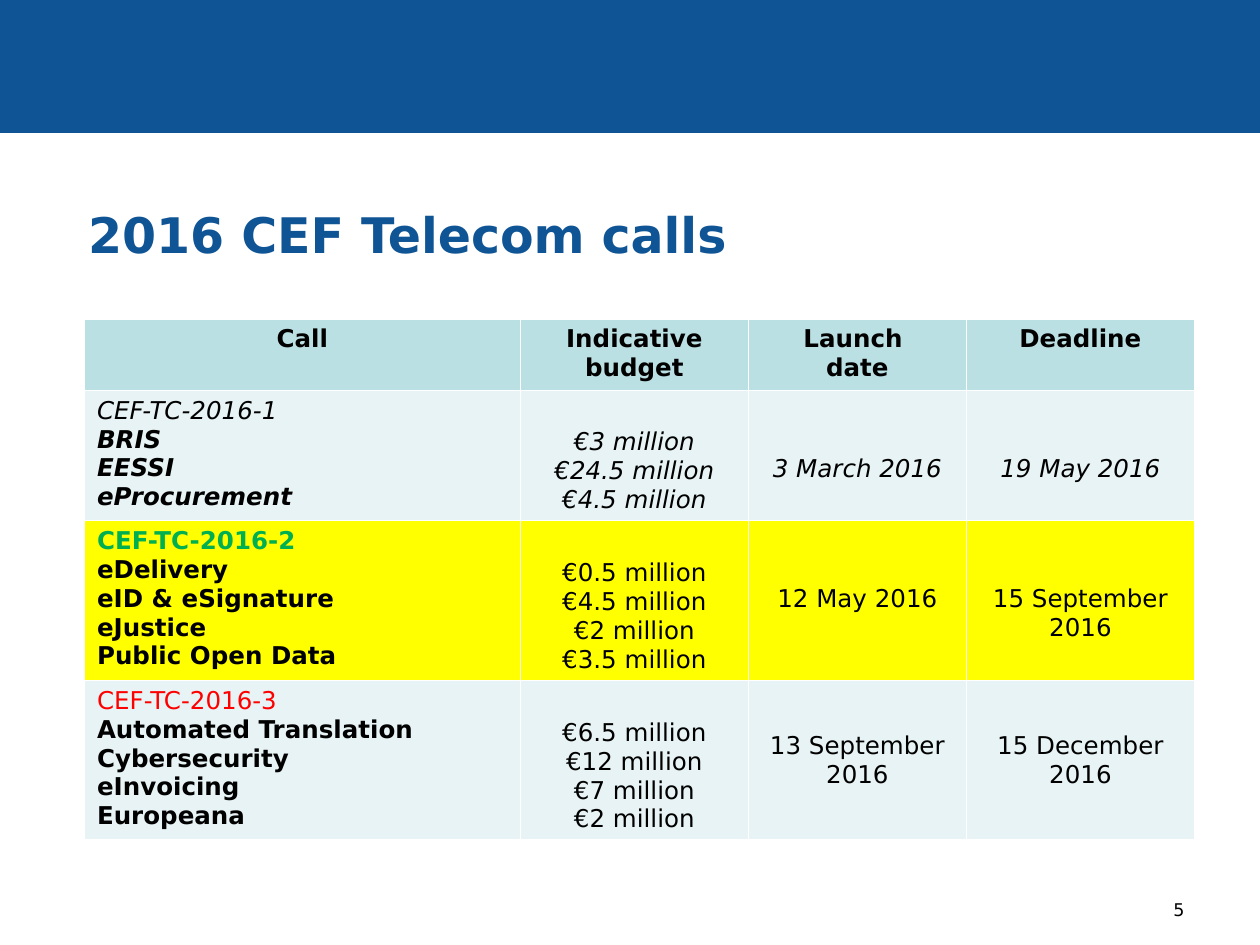
import pptx
import pptx.dml.color
import pptx.enum.shapes
import pptx.enum.text
import pptx.util

Inches = pptx.util.Inches
ALIGN = pptx.enum.text.PP_ALIGN
ANCHOR = pptx.enum.text.MSO_ANCHOR
FONT = "DejaVu Sans"
BLUE, BLACK, PALE, YELLOW = "0F5494", "000000", "E7F3F4", "FFFF00"
LINE_HEIGHT = 0.23
HEADINGS = [["Call"], ["Indicative budget"], ["Launch ", "date"], ["Deadline"]]
COLUMN_WIDTHS = [3.46, 1.81, 1.73, 1.81]
ROW_HEIGHTS = [0.55, 1.01, 1.24, 1.24]
CALLS = [
    dict(code="CEF-TC-2016-1", code_color=BLACK, code_bold=False, italic=True, fill=PALE,
         budgets={"BRIS": "€3 million", "EESSI": "€24.5 million",
                  "eProcurement": "€4.5 million"},
         dates=["3 March 2016", "19 May 2016"], centred=False),
    dict(code="CEF-TC-2016-2", code_color="00B050", code_bold=True, italic=False, fill=YELLOW,
         budgets={"eDelivery": "€0.5 million", "eID & eSignature": "€4.5 million",
                  "eJustice": "€2 million", "Public Open Data": "€3.5 million"},
         dates=["12 May 2016", "15 September 2016"], centred=False),
    dict(code="CEF-TC-2016-3", code_color="FF0000", code_bold=False, italic=False, fill=PALE,
         budgets={"Automated Translation": "€6.5 million", "Cybersecurity": "€12 million",
                  "eInvoicing": "€7 million", "Europeana": "€2 million"},
         dates=["13 September 2016", "15 December 2016"], centred=True),
]


def rgb(value):
    """Turn a hex string into a colour."""
    return pptx.dml.color.RGBColor.from_string(value)


def add_line(frame, text, size, color=BLACK, bold=False, italic=False, align=ALIGN.LEFT):
    """Add one paragraph with one run, using the empty first paragraph if there is one."""
    paragraph = frame.paragraphs[0]
    if paragraph.runs:
        paragraph = frame.add_paragraph()
    paragraph.alignment = align
    run = paragraph.add_run()
    run.text = text
    run.font.name = FONT
    run.font.size = pptx.util.Pt(size)
    run.font.bold = bold
    run.font.italic = italic
    run.font.color.rgb = rgb(color)


def add_banner(slide):
    """Draw the band across the top."""
    banner = slide.shapes.add_shape(pptx.enum.shapes.MSO_SHAPE.RECTANGLE,
                                    0, 0, Inches(10), Inches(1.05))
    banner.shadow.inherit = False
    banner.fill.solid()
    banner.fill.fore_color.rgb = rgb(BLUE)
    banner.line.color.rgb = rgb(BLUE)
    banner.line.width = pptx.util.Pt(0.75)


def add_text(slide, box, anchor, text, size, margin_left=0.1, **style):
    """Add a wrapped text box with a single line of text."""
    frame = slide.shapes.add_textbox(*map(Inches, box)).text_frame
    frame.word_wrap = True
    frame.vertical_anchor = anchor
    frame.margin_left = Inches(margin_left)
    add_line(frame, text, size, **style)


def fill_cell(cell, fill, lines, anchor=ANCHOR.TOP, skipped_lines=0, **style):
    """Colour a cell and write its lines, starting below any skipped lines."""
    cell.fill.solid()
    cell.fill.fore_color.rgb = rgb(fill)
    cell.vertical_anchor = anchor
    cell.margin_top = Inches(0.05 + skipped_lines * LINE_HEIGHT)
    for line in lines:
        add_line(cell.text_frame, line, 14, **style)


def fill_call_row(cells, call):
    """Write the code, services, budgets and dates of one call."""
    name_cell, budget_cell, *date_cells = cells
    fill, italic = call["fill"], call["italic"]
    fill_cell(name_cell, fill, [call["code"]], color=call["code_color"],
              bold=call["code_bold"], italic=italic)
    for service in call["budgets"]:
        add_line(name_cell.text_frame, service, 14, bold=True, italic=italic)
    fill_cell(budget_cell, fill, call["budgets"].values(), ANCHOR.BOTTOM,
              italic=italic, align=ALIGN.CENTER)
    anchor, skipped = (ANCHOR.MIDDLE, 0) if call["centred"] else (ANCHOR.TOP, 2)
    for cell, date in zip(date_cells, call["dates"]):
        fill_cell(cell, fill, [date], anchor, skipped, italic=italic, align=ALIGN.CENTER)


def add_calls_table(slide):
    """Build the table of calls."""
    table = slide.shapes.add_table(
        len(ROW_HEIGHTS), len(COLUMN_WIDTHS), Inches(0.67), Inches(2.53),
        Inches(sum(COLUMN_WIDTHS)), Inches(sum(ROW_HEIGHTS))).table
    for column, width in zip(table.columns, COLUMN_WIDTHS):
        column.width = Inches(width)
    for row, height in zip(table.rows, ROW_HEIGHTS):
        row.height = Inches(height)
    header, *call_rows = table.rows
    for cell, heading in zip(header.cells, HEADINGS):
        fill_cell(cell, "BBE0E3", heading, bold=True, align=ALIGN.CENTER)
    for row, call in zip(call_rows, CALLS):
        fill_call_row(row.cells, call)


def main():
    """Build and save the slide."""
    deck = pptx.Presentation()
    deck.slide_width, deck.slide_height = Inches(10), Inches(7.5)
    slide = deck.slides.add_slide(deck.slide_layouts[6])
    add_banner(slide)
    add_text(slide, (0.5, 1.31, 9, 1.09), ANCHOR.MIDDLE, "2016 CEF Telecom calls", 28,
             margin_left=0.2, color=BLUE, bold=True)
    add_calls_table(slide)
    add_text(slide, (7.17, 6.83, 2.33, 0.52), ANCHOR.BOTTOM, "5", 10, align=ALIGN.RIGHT)
    deck.save("out.pptx")


if __name__ == "__main__":
    main()
